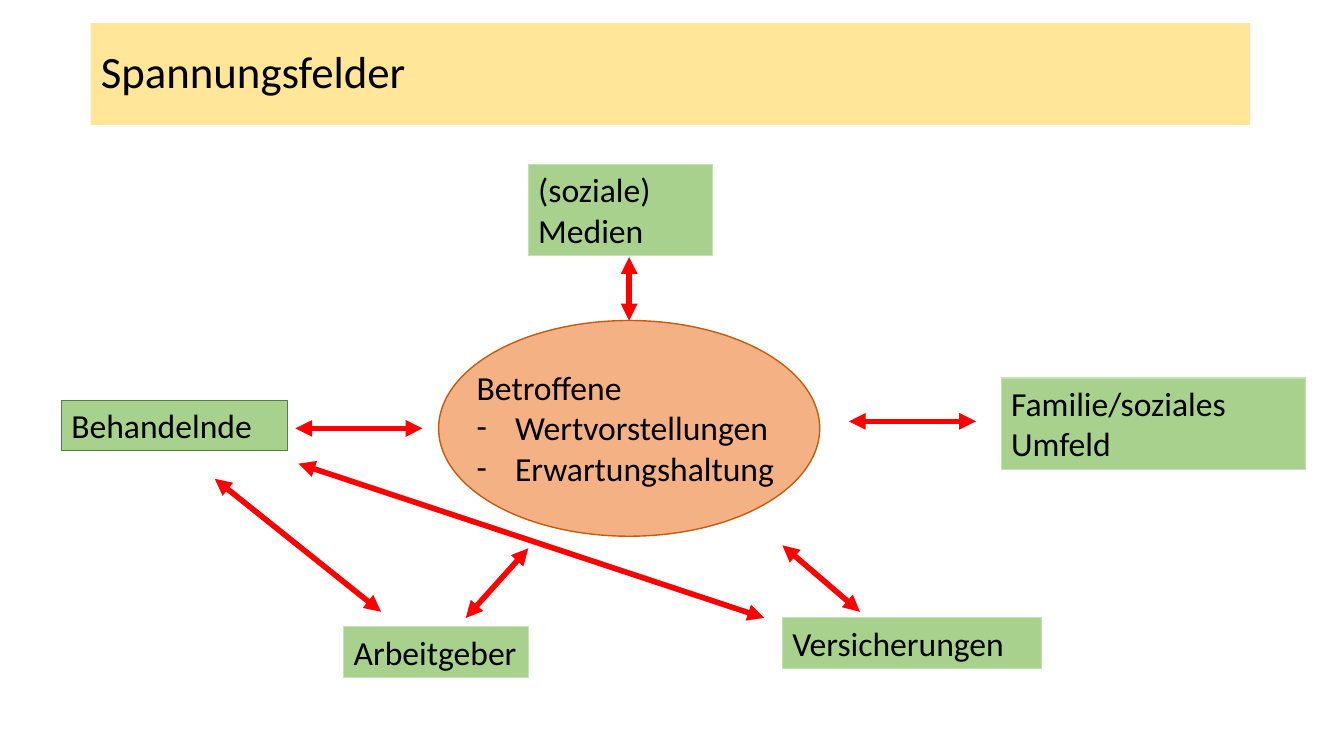
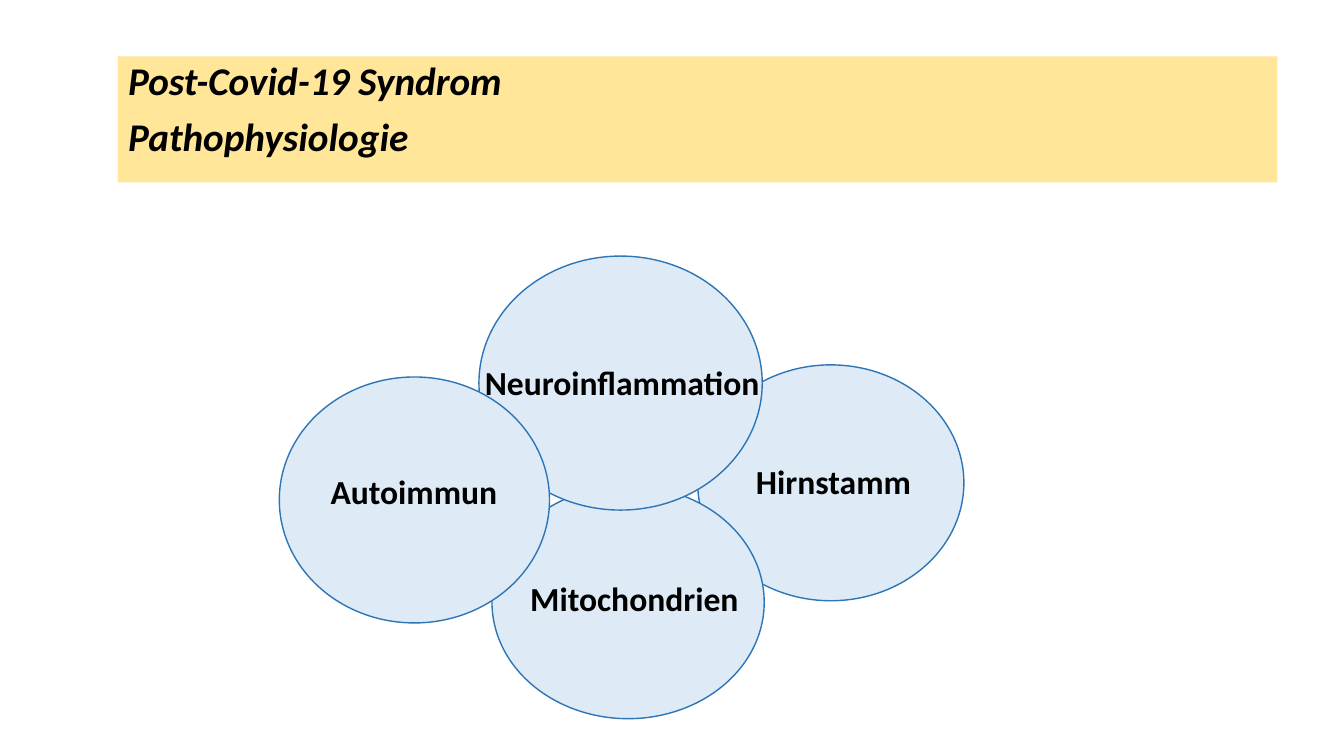
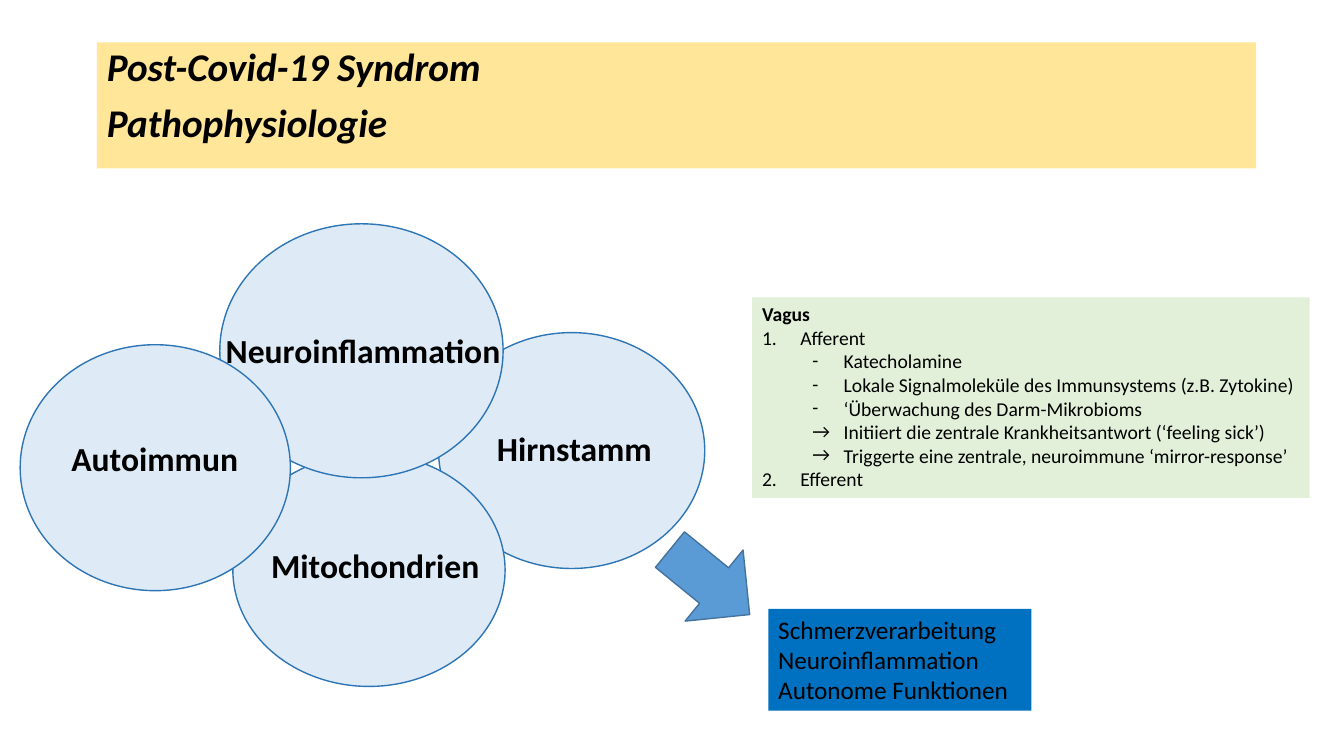
"""Builds three slides on tension fields and the pathophysiology of Post-Covid-19."""
from lxml import etree
from pptx import Presentation
from pptx.dml.color import RGBColor
from pptx.enum.shapes import MSO_CONNECTOR, MSO_SHAPE
from pptx.enum.text import MSO_ANCHOR, MSO_AUTO_SIZE, PP_ALIGN
from pptx.oxml.ns import qn
from pptx.util import Inches, Pt

RECTANGLE, OVAL, ARROW = MSO_SHAPE.RECTANGLE, MSO_SHAPE.OVAL, MSO_SHAPE.RIGHT_ARROW
STRAIGHT = MSO_CONNECTOR.STRAIGHT
TOP, MIDDLE = MSO_ANCHOR.TOP, MSO_ANCHOR.MIDDLE
FIT, FIXED = MSO_AUTO_SIZE.SHAPE_TO_FIT_TEXT, MSO_AUTO_SIZE.NONE
LEFT = PP_ALIGN.LEFT

FONT = "Calibri"
BLACK, RED = "000000", "FF0000"
BAND, GREEN, PALE_GREEN = "FFE699", "A9D18E", "C5E0B4"
NUMBER = "1."
LEVEL_INDENTS = [(0.38, -0.38), (0.81, -0.31)]

FIELDS = [
    ("Versicherungen", (7.76, 6.13, 2.57, 0.5), PALE_GREEN),
    ("Behandelnde", (0.61, 3.97, 2.24, 0.5), "548235"),
    ("Arbeitgeber", (3.41, 6.22, 1.83, 0.5), PALE_GREEN),
    ("(soziale) Medien", (5.24, 1.63, 1.83, 0.91), PALE_GREEN),
    ("Familie/soziales Umfeld", (9.93, 3.75, 3.02, 0.91), PALE_GREEN),
]
TENSIONS = [
    ((5.24, 5.44), (4.62, 6.13)),
    ((2.93, 4.25), (4.19, 4.25)),
    ((8.42, 4.18), (9.68, 4.18)),
    ((7.76, 5.41), (8.53, 6.07)),
    ((6.24, 2.55), (6.24, 3.18)),
    ((2.13, 4.75), (3.78, 6.07)),
    ((2.96, 4.6), (7.58, 6.13)),
]
AFFECTED = [("Betroffene", None, 0), ("Wertvorstellungen", "-", 0), ("Erwartungshaltung", "-", 0)]

SYNDROME_TITLE = ["Post-Covid-19 Syndrom", "Pathophysiologie"]
MECHANISMS = [
    ("Hirnstamm", (4.15, 1.08, 2.64, 2.34), (4.63, 1.98, 1.76)),
    ("Mitochondrien", (2.11, 2.28, 2.7, 2.31), (2.39, 3.14, 2.29)),
    ("Neuroinflammation", (1.98, 0, 2.81, 2.52), (1.94, 1, 2.96)),
    ("Autoimmun", (0, 1.2, 2.68, 2.44), (0.41, 2.08, 1.87)),
]
VAGUS = [
    ("Vagus", None, 0),
    ("Afferent", NUMBER, 0),
    ("Katecholamine", "-", 1),
    ("Lokale Signalmoleküle des Immunsystems (z.B. Zytokine)", "-", 1),
    ("‘Überwachung des Darm-Mikrobioms", "-", 1),
    ("Initiiert die zentrale Krankheitsantwort (‘feeling sick’)", "→", 1),
    ("Triggerte eine zentrale, neuroimmune ‘mirror-response’", "→", 1),
    ("Efferent", NUMBER, 0),
]
EFFECTS = ["Schmerzverarbeitung", "Neuroinflammation", "Autonome Funktionen"]


def color(value):
    """Turn a hex string into a colour."""
    return RGBColor.from_string(value)


def add_bullet(paragraph, mark, level):
    """Give a paragraph its mark and hanging indent."""
    paragraph.level = level
    margin, indent = LEVEL_INDENTS[level]
    properties = paragraph._p.get_or_add_pPr()
    properties.set("marL", str(Inches(margin)))
    properties.set("indent", str(Inches(indent)))
    if mark == NUMBER:
        etree.SubElement(properties, qn("a:buAutoNum")).set("type", "arabicPeriod")
    else:
        etree.SubElement(properties, qn("a:buFont")).set("typeface", FONT)
        etree.SubElement(properties, qn("a:buChar")).set("char", mark)


def write(shape, items, size, bold=False, italic=False, wrap=True, fit=FIT,
          anchor=TOP, spacing=None, gap=0, bold_first=False):
    """Fill a shape with paragraphs of (text, mark, level) or plain text."""
    frame = shape.text_frame
    frame.word_wrap, frame.auto_size, frame.vertical_anchor = wrap, fit, anchor
    for index, item in enumerate(items):
        text, mark, level = (item, None, 0) if isinstance(item, str) else item
        paragraph = frame.add_paragraph() if index else frame.paragraphs[0]
        if mark:
            add_bullet(paragraph, mark, level)
        paragraph.alignment = LEFT
        paragraph.space_before = Pt(gap if index else 0)
        if spacing:
            paragraph.line_spacing = spacing
        run = paragraph.add_run()
        run.text = text
        font = run.font
        font.name, font.size, font.italic = FONT, Pt(size), italic
        font.bold = bold or (bold_first and index == 0)
        font.color.rgb = color(BLACK)


def add_box(slide, kind, place, fill, line=None, width=1):
    """Add a flat preset shape."""
    shape = slide.shapes.add_shape(kind, *map(Inches, place))
    shape.shadow.inherit = False
    shape.fill.solid()
    shape.fill.fore_color.rgb = color(fill)
    if line:
        shape.line.color.rgb = color(line)
        shape.line.width = Pt(width)
    else:
        shape.line.fill.background()
    return shape


def add_label(slide, place, items, **style):
    """Add a text box."""
    write(slide.shapes.add_textbox(*map(Inches, place)), items, 24, **style)


def add_double_arrow(slide, start, end):
    """Add a red line with a head at both ends."""
    connector = slide.shapes.add_connector(STRAIGHT, *map(Inches, start + end))
    connector.line.color.rgb = color(RED)
    connector.line.width = Pt(4)
    line = connector.line._get_or_add_ln()
    for tag in ("a:headEnd", "a:tailEnd"):
        etree.SubElement(line, qn(tag)).set("type", "triangle")
    etree.SubElement(connector._element.spPr, qn("a:effectLst"))


def add_titled_slide(presentation, left, top, height, lines, size, **style):
    """Add a title-only slide whose title is the yellow band."""
    slide = presentation.slides.add_slide(presentation.slide_layouts[5])
    title = slide.shapes.title
    title.left, title.top, title.width, title.height = map(Inches, (left, top, 11.5, height))
    title.fill.solid()
    title.fill.fore_color.rgb = color(BAND)
    write(title, lines, size, fit=FIXED, spacing=0.9, gap=10, **style)
    return slide


def add_syndrome_slide(presentation, band_left, band_top, left, top):
    """Add a syndrome slide with the cluster of mechanisms at left, top."""
    slide = add_titled_slide(presentation, band_left, band_top, 1.25, SYNDROME_TITLE, 28,
                             bold=True, italic=True)
    for _, (x, y, width, height), _ in MECHANISMS:
        add_box(slide, OVAL, (left + x, top + y, width, height), "DEEBF7", "2E75B6")
    for name, _, (x, y, width) in MECHANISMS:
        add_label(slide, (left + x, top + y, width, 0.5), [name], bold=True, wrap=False)
    return slide


def build_tensions(presentation):
    """Build the slide of tension fields."""
    slide = add_titled_slide(presentation, 0.9, 0.23, 1.01, ["Spannungsfelder"], 32,
                             anchor=MIDDLE)
    add_box(slide, OVAL, (4.35, 3.18, 3.78, 2.14), "F4B183", "C55A11")
    add_label(slide, (4.63, 3.59, 3.67, 1.31), AFFECTED)
    for name, place, line in FIELDS:
        write(add_box(slide, RECTANGLE, place, GREEN, line, 0.75), [name], 24)
    for start, end in TENSIONS:
        add_double_arrow(slide, start, end)


def build_vagus(presentation):
    """Build the syndrome slide with the vagus and its effects."""
    slide = add_syndrome_slide(presentation, 0.96, 0.42, 0.2, 2.22)
    vagus = add_box(slide, RECTANGLE, (7.46, 2.95, 5.53, 1.99), "E2F0D9")
    write(vagus, VAGUS, 14, wrap=False, bold_first=True)
    arrow = add_box(slide, ARROW, (6.53, 5.32, 1.02, 0.91), "5B9BD5", "43739E")
    arrow.rotation = 39.2
    effects = add_box(slide, RECTANGLE, (7.62, 6.04, 2.61, 1.01), "0070C0")
    write(effects, EFFECTS, 18, wrap=False)


def main():
    """Build and save the presentation."""
    presentation = Presentation()
    presentation.slide_width, presentation.slide_height = Inches(13.33), Inches(7.5)
    build_tensions(presentation)
    add_syndrome_slide(presentation, 1.17, 0.56, 2.77, 2.54)
    build_vagus(presentation)
    presentation.save("out.pptx")


if __name__ == "__main__":
    main()
